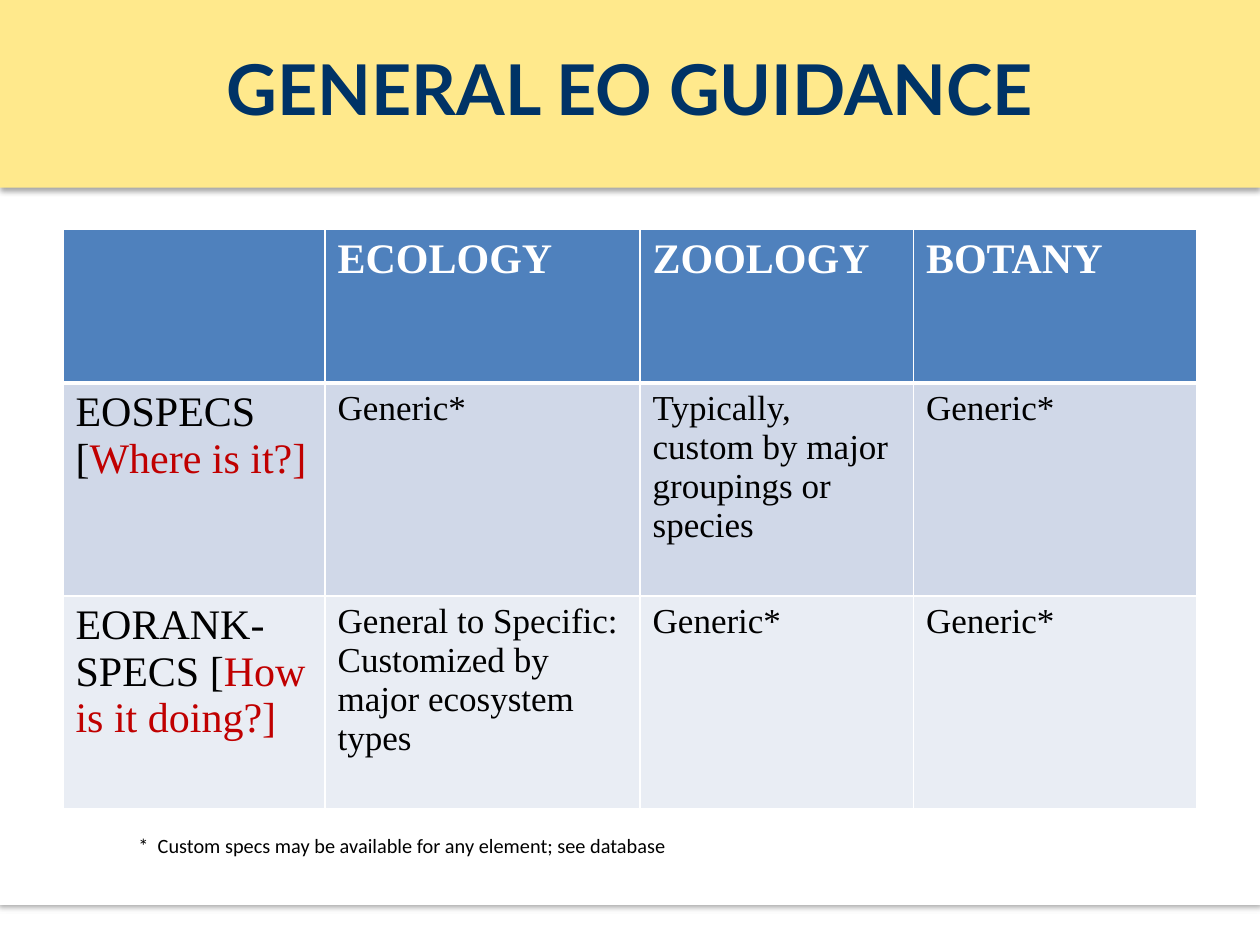
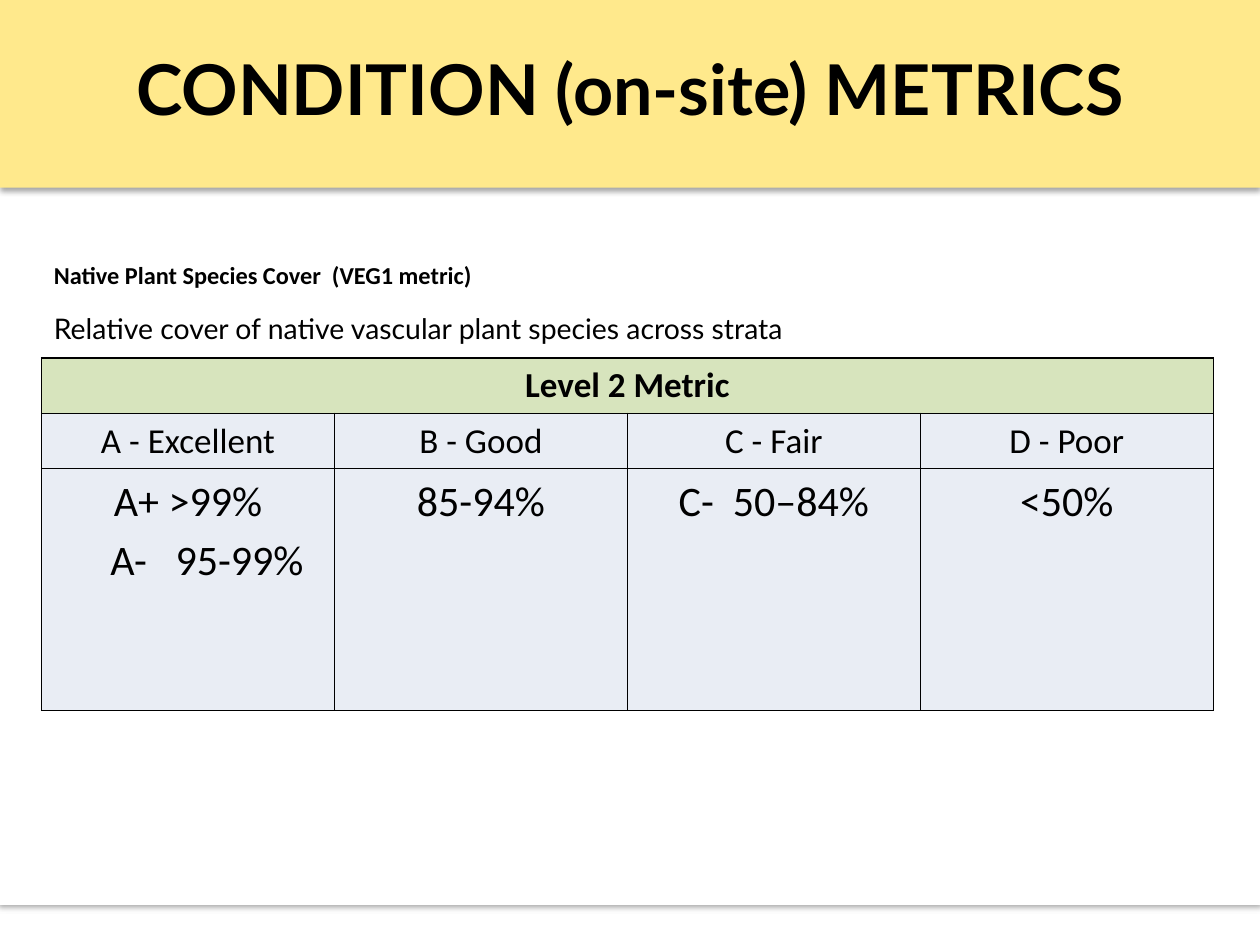
from lxml import etree
from pptx import Presentation
from pptx.dml.color import RGBColor as RGB
from pptx.enum.shapes import MSO_SHAPE as SHAPE
from pptx.enum.text import MSO_ANCHOR as ANCHOR, PP_ALIGN as ALIGN
from pptx.oxml import parse_xml
from pptx.util import Emu, Pt

PX = 9144
NS = 'xmlns:a="http://schemas.openxmlformats.org/drawingml/2006/main"'
WHITE = RGB(0xFF, 0xFF, 0xFF)
BLACK = RGB(0, 0, 0)
YELLOW = RGB(0xFF, 0xE9, 0x8C)
NAVY = RGB(0x00, 0x33, 0x66)
RED = RGB(0xC0, 0x00, 0x00)
BLUE = RGB(0x4F, 0x81, 0xBD)
ROW_DARK = RGB(0xD0, 0xD8, 0xE8)
ROW_LIGHT = RGB(0xE9, 0xED, 0xF4)
GREEN = RGB(0xD7, 0xE4, 0xBD)
SHADOW = (f'<a:effectLst {NS}><a:outerShdw blurRad="39370" dist="22860" dir="5400000" '
          'rotWithShape="0"><a:srgbClr val="000000"><a:alpha val="35000"/></a:srgbClr>'
          '</a:outerShdw></a:effectLst>')


def write(p, runs, font, size, bold=False):
    for text, color in runs:
        r = p.add_run()
        r.text = text
        r.font.name, r.font.size, r.font.bold = font, Pt(size), bold
        r.font.color.rgb = color


def style_cell(cell, fill, color, bottom=1):
    tcPr = cell._tc.get_or_add_tcPr()
    for side in ("lnL", "lnR", "lnT", "lnB"):
        width = Pt(bottom if side == "lnB" else 1)
        tcPr.append(parse_xml(
            f'<a:{side} {NS} w="{width}"><a:solidFill><a:srgbClr val="{color}"/>'
            f'</a:solidFill></a:{side}>'))
    cell.fill.solid()
    cell.fill.fore_color.rgb = fill


prs = Presentation()
prs.slide_width, prs.slide_height = Emu(1000 * PX), Emu(750 * PX)
slides = []
for title, color in (("GENERAL EO GUIDANCE", NAVY), ("CONDITION (on-site) METRICS", BLACK)):
    s = prs.slides.add_slide(prs.slide_layouts[6])
    slides.append(s)
    for top, height, fill in ((128, 590, WHITE), (0, 149, YELLOW)):
        sp = s.shapes.add_shape(SHAPE.RECTANGLE, 0, top * PX, 1000 * PX, height * PX)
        sp.fill.solid()
        sp.fill.fore_color.rgb = fill
        if fill == WHITE:
            sp.line.color.rgb = WHITE
            sp.line.width = Pt(0.75)
        else:
            sp.line.fill.background()
        sp._element.spPr.append(etree.fromstring(SHADOW))
    tf = s.shapes.add_textbox(50 * PX, 36 * PX, 900 * PX, 78 * PX).text_frame
    tf.word_wrap = True
    tf.vertical_anchor = ANCHOR.MIDDLE
    p = tf.paragraphs[0]
    p.alignment, p.line_spacing = ALIGN.CENTER, 0.85
    write(p, [(title, color)], "Lato", 40, True)
guidance, metrics = slides

rows = [
    ["", "ECOLOGY", "ZOOLOGY", "BOTANY"],
    [("EOSPECS [", "Where is it?]"), "Generic*",
     "Typically, custom by major groupings or species", "Generic*"],
    [("EORANK-SPECS [", "How is it doing?]"),
     "General to Specific:\nCustomized by major ecosystem types", "Generic*", "Generic*"],
]
table = guidance.shapes.add_table(3, 4, 50 * PX, 182 * PX, 900 * PX, 460 * PX).table
for col, width in zip(table.columns, (208, 250, 217, 225)):
    col.width = Emu(width * PX)
for row, height in zip(table.rows, (122, 169, 169)):
    row.height = Emu(height * PX)
for i, (texts, fill) in enumerate(zip(rows, (BLUE, ROW_DARK, ROW_LIGHT))):
    for j, text in enumerate(texts):
        cell = table.cell(i, j)
        style_cell(cell, fill, WHITE, 1 if i else 3)
        tf = cell.text_frame
        if i and j == 0:
            write(tf.paragraphs[0], zip(text, (BLACK, RED)), "Times New Roman", 24)
        elif text:
            for k, line in enumerate(text.split("\n")):
                p = tf.add_paragraph() if k else tf.paragraphs[0]
                write(p, [(line, BLACK if i else WHITE)], "Times New Roman",
                      20 if i else 24, not i)

tf = guidance.shapes.add_textbox(100 * PX, 649 * PX, 858 * PX, 44 * PX).text_frame
tf.word_wrap = True
tf.vertical_anchor = ANCHOR.MIDDLE
write(tf.paragraphs[0], [("*  Custom specs may be available for any element; see database", BLACK)],
      "Calibri", 11.6)

rows = [
    ["Level 2 Metric", "", "", ""],
    ["A - Excellent", "B - Good", "C - Fair", "D - Poor"],
    ["A+ >99%\nA-   95-99%", "85-94%", "C-  50–84%", "<50%"],
]
table = metrics.shapes.add_table(3, 4, 33 * PX, 284 * PX, 930 * PX, 280 * PX).table
for row, height in zip(table.rows, (44, 44, 192)):
    row.height = Emu(height * PX)
table.cell(0, 0).merge(table.cell(0, 3))
for i, (texts, fill) in enumerate(zip(rows, (GREEN, ROW_LIGHT, ROW_LIGHT))):
    for j, text in enumerate(texts):
        cell = table.cell(i, j)
        style_cell(cell, fill, BLACK)
        cell.margin_left = cell.margin_right = Emu(7 * PX)
        cell.margin_top = cell.margin_bottom = 0
        if not text:
            continue
        tf = cell.text_frame
        for k, line in enumerate(text.split("\n")):
            p = tf.add_paragraph() if k else tf.paragraphs[0]
            p.alignment, p.line_spacing = ALIGN.CENTER, 1.15
            if k:
                p._p.get_or_add_pPr().set("marL", str(30 * PX))
            write(p, [(line, BLACK)], "Calibri", 24 if i == 2 else 20, i == 0)

tf = metrics.shapes.add_textbox(33 * PX, 191 * PX, 717 * PX, 98 * PX).text_frame
tf.word_wrap = True
tf.vertical_anchor = ANCHOR.MIDDLE
write(tf.paragraphs[0], [("Native Plant Species Cover  (VEG1 metric)", BLACK)],
      "Calibri", 13.9, True)
p = tf.add_paragraph()
p.space_before = Pt(12.5)
write(p, [("Relative cover of native vascular plant species across strata", BLACK)],
      "Lato", 16.2)

prs.save("out.pptx")
